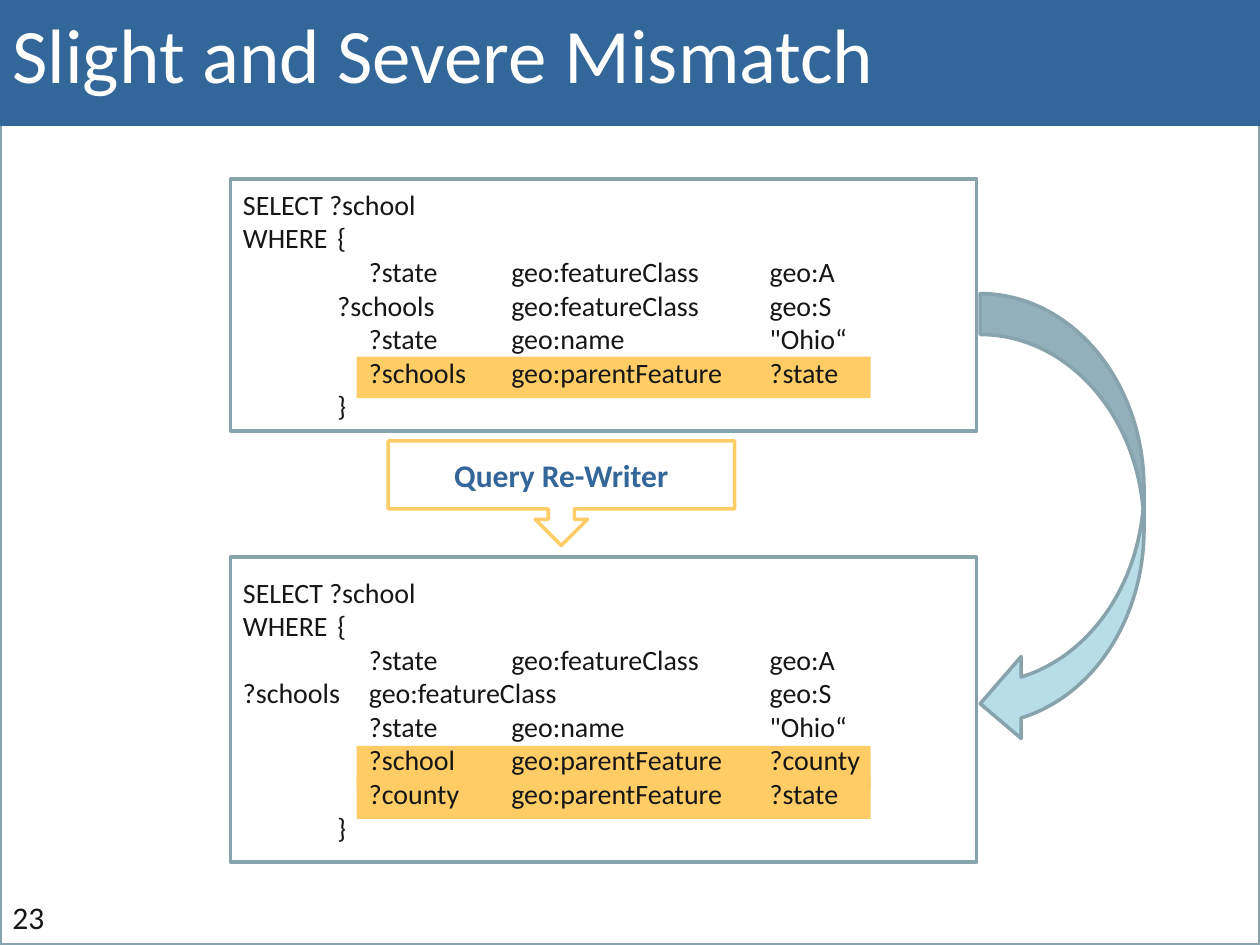
from dataclasses import dataclass
from typing import Optional

from pptx import Presentation
from pptx import util as u
from pptx.dml.color import RGBColor
from pptx.enum import shapes, text
from pptx.oxml.ns import qn
from lxml import etree


@dataclass(frozen=True)
class Theme:
    font: str = "Calibri"
    backdrop: str = "D8D8D8"
    white: str = "FFFFFF"
    ink: str = "161616"
    blue: str = "336699"
    frame: str = "87A3AC"
    amber: str = "FFCC66"
    ice: str = "B7DDE8"
    title_size: int = 44
    label_size: int = 18
    query_size: int = 16
    line_width: int = 2


@dataclass(frozen=True)
class Area:
    left: float
    top: float
    width: float
    height: float

    def lengths(self) -> list:
        return [u.Inches(v) for v in (self.left, self.top, self.width, self.height)]


@dataclass(frozen=True)
class Query:
    top: float
    height: float
    highlight_tops: tuple
    lines: tuple


THEME = Theme()
SHAPE = shapes.MSO_SHAPE
TAB_STOPS = (0.75, 1, 2.13, 4.18)
QUERIES = (
    Query(1.42, 2, (2.83,), (
        "SELECT ?school",
        "WHERE\t{",
        "\t\t?state\tgeo:featureClass\tgeo:A",
        "\t?schools\tgeo:featureClass\tgeo:S",
        "\t\t?state\tgeo:name\t\"Ohio“",
        "\t\t?schools\tgeo:parentFeature\t?state",
        "\t}",
    )),
    Query(4.42, 2.42, (5.92, 6.17), (
        "SELECT ?school",
        "WHERE\t{",
        "\t\t?state\tgeo:featureClass\tgeo:A",
        "?schools\tgeo:featureClass\tgeo:S",
        "\t\t?state\tgeo:name\t\"Ohio“",
        "\t\t?school\tgeo:parentFeature\t?county",
        "\t\t?county\tgeo:parentFeature\t?state",
        "\t}",
    )),
)


def add_block(page, kind, area: Area, fill: Optional[str] = None,
              line: Optional[str] = None):
    block = page.shapes.add_shape(kind, *area.lengths())
    block.shadow.inherit = False
    if fill:
        block.fill.solid()
        block.fill.fore_color.rgb = RGBColor.from_string(fill)
    else:
        block.fill.background()
    if line:
        block.line.color.rgb = RGBColor.from_string(line)
        block.line.width = u.Pt(THEME.line_width)
    else:
        block.line.fill.background()
    return block


def set_tabs(para) -> None:
    properties = para._p.get_or_add_pPr()
    tab_list = etree.SubElement(properties, qn("a:tabLst"))
    for stop in TAB_STOPS:
        etree.SubElement(tab_list, qn("a:tab"), pos=str(u.Inches(stop)), algn="l")


def write(box, lines: tuple, size: int, color: str, bold: bool = False,
          align=text.PP_ALIGN.LEFT, anchor=text.MSO_ANCHOR.TOP,
          tabbed: bool = False) -> None:
    frame = box.text_frame
    frame.word_wrap = True
    frame.vertical_anchor = anchor
    for index, line in enumerate(lines):
        para = frame.add_paragraph() if index else frame.paragraphs[0]
        para.text = line
        para.alignment = align
        if tabbed:
            set_tabs(para)
        para.font.name = THEME.font
        para.font.size = u.Pt(size)
        para.font.bold = bold
        para.font.color.rgb = RGBColor.from_string(color)


def add_query(page, query: Query) -> None:
    for top in query.highlight_tops:
        add_block(page, SHAPE.RECTANGLE, Area(2.83, top, 4.08, 0.33), THEME.amber)
    box = add_block(page, SHAPE.RECTANGLE, Area(1.83, query.top, 5.92, query.height),
                    line=THEME.frame)
    write(box, query.lines, THEME.query_size, THEME.ink,
          anchor=text.MSO_ANCHOR.MIDDLE, tabbed=True)


def main() -> None:
    deck = Presentation()
    deck.slide_width, deck.slide_height = u.Inches(10), u.Inches(7.5)
    page = deck.slides.add_slide(deck.slide_layouts[6])
    page.background.fill.solid()
    page.background.fill.fore_color.rgb = RGBColor.from_string(THEME.backdrop)

    add_block(page, SHAPE.RECTANGLE, Area(0, 0, 10, 7.5), THEME.white, THEME.frame)
    title = add_block(page, SHAPE.RECTANGLE, Area(0, 0, 10, 1), THEME.blue)
    write(title, ("Slight and Severe Mismatch",), THEME.title_size, THEME.white)

    for query in QUERIES:
        add_query(page, query)

    add_block(page, SHAPE.CURVED_LEFT_ARROW, Area(7.78, 2.33, 1.3, 3.58),
              THEME.ice, THEME.frame)
    rewriter = add_block(page, SHAPE.DOWN_ARROW_CALLOUT, Area(3.08, 3.5, 2.75, 0.83),
                         THEME.white, THEME.amber)
    write(rewriter, ("Query Re-Writer",), THEME.label_size, THEME.blue, bold=True,
          align=text.PP_ALIGN.CENTER, anchor=text.MSO_ANCHOR.MIDDLE)

    number = page.shapes.add_textbox(*Area(0, 7.08, 0.5, 0.42).lengths())
    write(number, ("23",), THEME.label_size, THEME.ink)

    deck.save("out.pptx")


if __name__ == "__main__":
    main()
